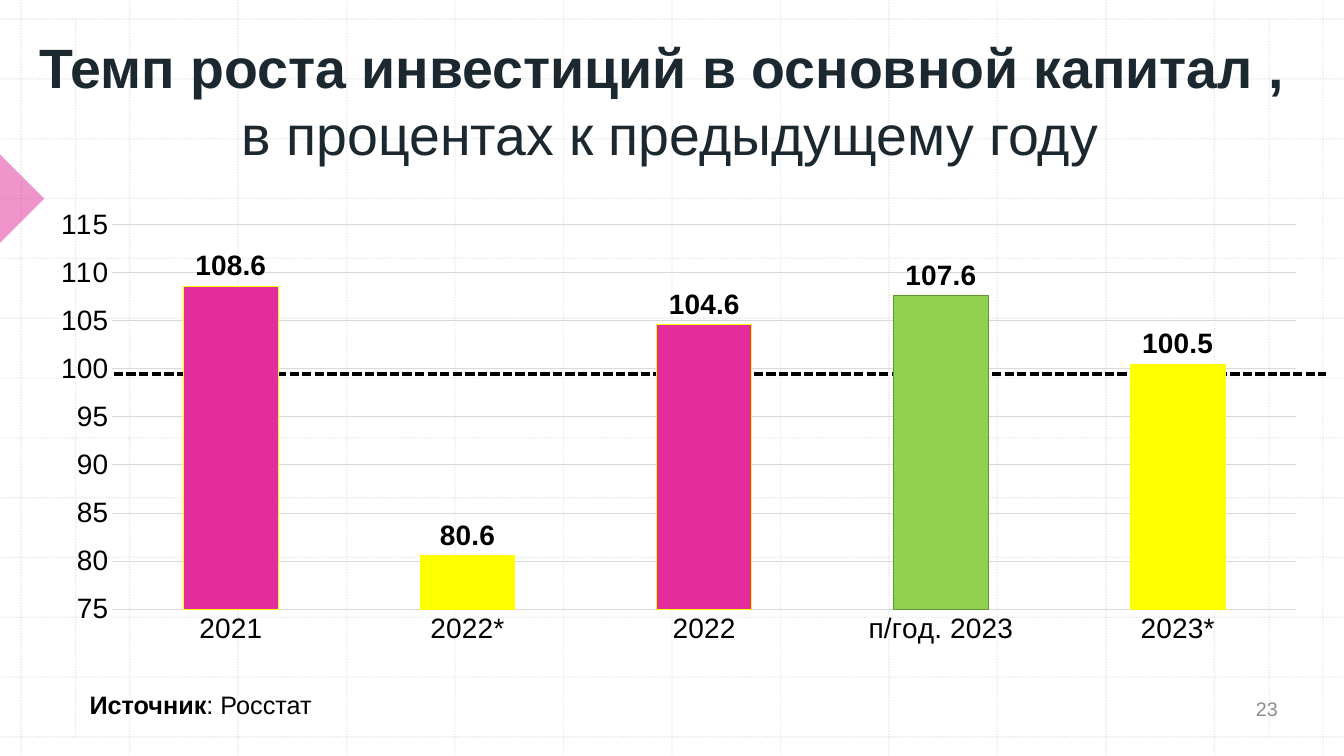
"""Build the slide on growth of capital investment."""
from dataclasses import dataclass

from lxml import etree
from pptx import Presentation
from pptx.chart.data import CategoryChartData
from pptx.dml.color import RGBColor
from pptx.enum.chart import XL_CHART_TYPE, XL_LABEL_POSITION, XL_TICK_MARK
from pptx.enum.dml import MSO_LINE
from pptx.enum.shapes import MSO_CONNECTOR, MSO_SHAPE
from pptx.enum.text import MSO_ANCHOR, PP_ALIGN
from pptx.oxml.ns import qn
from pptx.util import Inches, Pt

COLUMN = XL_CHART_TYPE.COLUMN_CLUSTERED
OUTSIDE = XL_LABEL_POSITION.OUTSIDE_END
NO_TICK = XL_TICK_MARK.NONE
DOT, DASH = MSO_LINE.ROUND_DOT, MSO_LINE.DASH
DOT, DASH = MSO_LINE.ROUND_DOT, MSO_LINE.SQUARE_DOT
STRAIGHT = MSO_CONNECTOR.STRAIGHT
WEDGE = MSO_SHAPE.RIGHT_TRIANGLE
LEFT, CENTER = PP_ALIGN.LEFT, PP_ALIGN.CENTER
TOP, MIDDLE, BOTTOM = MSO_ANCHOR.TOP, MSO_ANCHOR.MIDDLE, MSO_ANCHOR.BOTTOM


@dataclass(frozen=True)
class Theme:
    font: str = "Arial"
    black: str = "000000"
    title: str = "1B2830"
    muted: str = "8C8C8C"
    grid: str = "BCBCBC"
    rule: str = "D9D9D9"
    pink: str = "E32D9B"
    yellow: str = "FFFF00"
    green: str = "92D050"
    edge: str = "5E9732"
    title_size: float = 39.6
    chart_size: float = 20
    note_size: float = 18
    page_size: float = 14


@dataclass(frozen=True)
class Line:
    x1: float
    y1: float
    x2: float
    y2: float
    color: str
    width: float
    dash: MSO_LINE
    alpha: int = 100


@dataclass(frozen=True)
class Label:
    box: tuple[float, float, float, float]
    rows: list[list[tuple[str, bool]]]
    size: float
    color: str
    align: PP_ALIGN = LEFT
    anchor: MSO_ANCHOR = TOP
    wrap: bool = True


@dataclass(frozen=True)
class Bar:
    name: str
    value: float
    fill: str
    edge: str


THEME = Theme()
WIDTH, HEIGHT = 13.33, 7.5
STEPS = 12
BARS = [
    Bar("2021", 108.6, THEME.pink, THEME.yellow),
    Bar("2022*", 80.6, THEME.yellow, THEME.yellow),
    Bar("2022", 104.6, THEME.pink, THEME.yellow),
    Bar("п/год. 2023", 107.6, THEME.green, THEME.edge),
    Bar("2023*", 100.5, THEME.yellow, THEME.yellow),
]
LABELS = [
    Label((0.26, 0.12, 12.77, 1.58),
          [[("Темп роста инвестиций в основной капитал , ", True)],
           [("в процентах к предыдущему году", False)]],
          THEME.title_size, THEME.title, CENTER, BOTTOM),
    Label((0.79, 6.79, 2.43, 0.4), [[("Источник", True), (": Росстат", False)]],
          THEME.note_size, THEME.black, wrap=False),
    Label((12.03, 6.8, 1.07, 0.46), [[("23", False)]],
          THEME.page_size, THEME.muted, CENTER, MIDDLE),
]


def rgb(code: str) -> RGBColor:
    return RGBColor.from_string(code)


def set_font(font, size: float, color: str, bold: bool = False) -> None:
    font.name, font.size, font.bold = THEME.font, Pt(size), bold
    font.color.rgb = rgb(color)


def set_line(line, color: str, width: float) -> None:
    line.color.rgb = rgb(color)
    line.width = Pt(width)


def set_alpha(props, share: int) -> None:
    tone = next(props.iter(qn("a:srgbClr")))
    etree.SubElement(tone, qn("a:alpha"), val=str(share * 1000))


def draw_line(slide, item: Line) -> None:
    ends = [Inches(n) for n in (item.x1, item.y1, item.x2, item.y2)]
    shape = slide.shapes.add_connector(STRAIGHT, *ends)
    set_line(shape.line, item.color, item.width)
    shape.line.dash_style = item.dash
    props = shape._element.spPr
    if item.alpha < 100:
        set_alpha(props, item.alpha)
    etree.SubElement(props, qn("a:effectLst"))


def draw_grid(slide) -> None:
    spots = [(0.21 + 12.91 * i / STEPS, 0.19 + 7.12 * i / STEPS)
             for i in range(STEPS + 1)]
    spans = [(x, 0, x, HEIGHT) for x, _ in spots]
    spans += [(0, y, WIDTH, y) for _, y in spots]
    spans += [(x, 0.19, x, 7.31) for x in (0.75, 12.59)]
    for span in spans:
        draw_line(slide, Line(*span, THEME.grid, 1, DOT, 30))


def draw_wedge(slide) -> None:
    box = [Inches(n) for n in (-0.31, 1.66, 0.62, 0.62)]
    shape = slide.shapes.add_shape(WEDGE, *box)
    shape.rotation = 225
    shape.shadow.inherit = False
    shape.fill.solid()
    shape.fill.fore_color.rgb = rgb(THEME.pink)
    set_alpha(shape._element.spPr, 50)
    shape.line.fill.background()


def draw_label(slide, item: Label) -> None:
    frame = slide.shapes.add_textbox(*map(Inches, item.box)).text_frame
    frame.word_wrap, frame.vertical_anchor = item.wrap, item.anchor
    para = frame.paragraphs[0]
    para.alignment = item.align
    for i, row in enumerate(item.rows):
        if i:
            para.add_line_break()
        for text, bold in row:
            run = para.add_run()
            run.text = text
            set_font(run.font, item.size, item.color, bold)


def place_plot(chart) -> None:
    space = chart._chartSpace
    plot = next(space.iter(qn("c:plotArea")))
    for old in plot.findall(qn("c:layout")):
        plot.remove(old)
    layout = etree.Element(qn("c:layout"))
    plot.insert(0, layout)
    manual = etree.SubElement(layout, qn("c:manualLayout"))
    marks = {"layoutTarget": "inner", "xMode": "edge", "yMode": "edge",
             "x": "0.06", "y": "0.053", "w": "0.92", "h": "0.848"}
    for name, mark in marks.items():
        etree.SubElement(manual, qn(f"c:{name}"), val=mark)
    props = etree.Element(qn("c:spPr"))
    etree.SubElement(props, qn("a:noFill"))
    etree.SubElement(etree.SubElement(props, qn("a:ln")), qn("a:noFill"))
    space.find(qn("c:chart")).addnext(props)


def draw_chart(slide) -> None:
    data = CategoryChartData(number_format="General")
    data.categories = [bar.name for bar in BARS]
    data.add_series("Series 1", [bar.value for bar in BARS])
    box = [Inches(n) for n in (0.35, 1.99, 12.76, 4.5)]
    chart = slide.shapes.add_chart(COLUMN, *box, data).chart
    chart.has_legend = chart.has_title = False
    set_font(chart.font, THEME.chart_size, THEME.black)
    for axis in (chart.category_axis, chart.value_axis):
        axis.major_tick_mark = axis.minor_tick_mark = NO_TICK
        set_font(axis.tick_labels.font, THEME.chart_size, THEME.black)
    set_line(chart.category_axis.format.line, THEME.rule, 0.75)
    scale = chart.value_axis
    scale.minimum_scale, scale.maximum_scale, scale.major_unit = 75, 115, 5
    scale.format.line.fill.background()
    set_line(scale.major_gridlines.format.line, THEME.rule, 0.75)
    plot = chart.plots[0]
    plot.gap_width, plot.vary_by_categories = 150, False
    series = plot.series[0]
    series.format.fill.solid()
    series.format.fill.fore_color.rgb = rgb(THEME.pink)
    set_line(series.format.line, THEME.yellow, 0.75)
    for i, bar in enumerate(BARS):
        look = series.points[i].format
        look.fill.solid()
        look.fill.fore_color.rgb = rgb(bar.fill)
        set_line(look.line, bar.edge, 0.75)
    tags = series.data_labels
    tags.show_value, tags.position = True, OUTSIDE
    tags.number_format, tags.number_format_is_linked = "#,##0.0", False
    set_font(tags.font, THEME.chart_size, THEME.black, True)
    place_plot(chart)


def main() -> None:
    deck = Presentation()
    deck.slide_width, deck.slide_height = Inches(WIDTH), Inches(HEIGHT)
    slide = deck.slides.add_slide(deck.slide_layouts[6])
    draw_grid(slide)
    draw_wedge(slide)
    draw_line(slide, Line(1.13, 3.71, 13.15, 3.71, THEME.black, 2.25, DASH))
    draw_chart(slide)
    for label in LABELS:
        draw_label(slide, label)
    deck.save("out.pptx")


if __name__ == "__main__":
    main()
